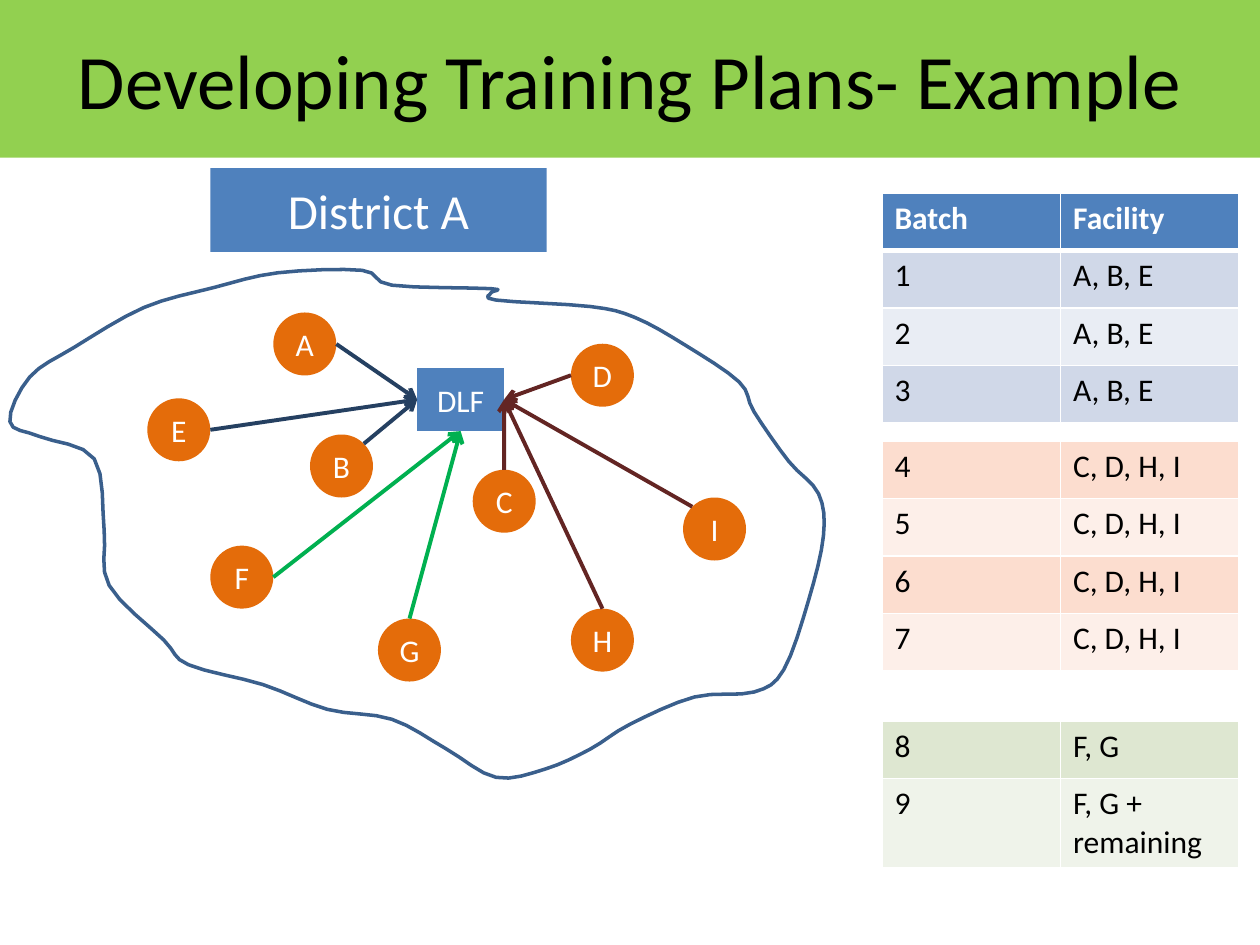
import math

import lxml.etree
import pptx
import pptx.dml.color
import pptx.enum.shapes
import pptx.enum.text
import pptx.oxml.ns
import pptx.util

Cm, Pt = pptx.util.Cm, pptx.util.Pt
SHAPE = pptx.enum.shapes.MSO_SHAPE
CENTER = pptx.enum.text.PP_ALIGN.CENTER
MIDDLE = pptx.enum.text.MSO_ANCHOR.MIDDLE

THEME = {
    "font": "Calibri", "title_size": 44, "label_size": 28, "body_size": 18,
    "black": "000000", "white": "FFFFFF", "banner": "92D050", "box": "4F81BD",
    "facility": "E46C0A", "border": "3A5F8C",
    "navy": "254061", "maroon": "632523", "green": "00B050",
    "blue_bands": ("D0D8E8", "E9EDF4"),
    "red_bands": ("FCDDCF", "FDEFE9"),
    "green_bands": ("DEE7D1", "EFF3EA"),
}

TITLE = "Developing Training Plans- Example"
DISTRICT = ("District A", (4.24, 3.39, 6.78, 1.69))
HUB = ("DLF", (8.41, 7.42, 1.75, 1.27))

# Sides of the hub, as connection sites
LEFT, BOTTOM, RIGHT = 1, 2, 3
# Directions in which an arrow leaves its facility, in degrees
EAST, NORTHEAST, NORTH, NORTHWEST, WEST = range(0, 181, 45)
# name, left, top (cm), direction, hub side, arrow colour
DIAMETER = 1.27
FACILITIES = [
    ("A", 5.51, 6.30, EAST, LEFT, "navy"),
    ("E", 2.97, 8.03, EAST, LEFT, "navy"),
    ("B", 6.25, 8.76, NORTHEAST, LEFT, "navy"),
    ("D", 11.51, 6.93, WEST, RIGHT, "maroon"),
    ("I", 13.77, 10.03, NORTHWEST, RIGHT, "maroon"),
    ("H", 11.51, 12.27, NORTH, RIGHT, "maroon"),
    ("C", 9.53, 9.47, NORTH, RIGHT, "maroon"),
    ("F", 4.24, 11.00, EAST, BOTTOM, "green"),
    ("G", 7.62, 12.47, NORTH, BOTTOM, "green"),
]

# top (cm), header, band colours, batches, facilities
TABLE_LEFT, COLUMN_WIDTH, ROW_HEIGHT = 17.78, 3.6, 1.16
BATCHES = [
    (3.89, ("Batch", "Facility"), "blue_bands", "123", ["A, B, E"] * 3),
    (8.89, None, "red_bands", "4567", ["C, D, H, I"] * 4),
    (14.53, None, "green_bands", "89", ["F, G", "F, G + remaining"]),
]

# District boundary (cm)
BOUNDARY = [
    (5.6, 5.5), (4.3, 5.8), (2.9, 6.2), (1.5, 7), (0.6, 7.6), (0.2, 8.5),
    (0.8, 8.8), (1.9, 9.25), (2.1, 10.7), (2.2, 11.8), (3.3, 12.9),
    (3.8, 13.4), (5.3, 13.8), (6.6, 14.3), (7.9, 14.5), (9, 15.1),
    (10, 15.67), (11, 15.5), (11.9, 15.1), (12.7, 14.6), (14, 14.05),
    (15.2, 13.95), (15.8, 13.5), (16.3, 12.1), (16.6, 10.8), (16.5, 9.95),
    (15.9, 9.3), (15.2, 8.3), (14.9, 7.7), (13.8, 6.95), (12.8, 6.4),
    (11.9, 6.18), (10, 6.05), (9.9, 5.9), (9.9, 5.82), (7.9, 5.75),
    (7.3, 5.45),
]


def color(name):
    return pptx.dml.color.RGBColor.from_string(THEME[name])


def write(frame, text, size="body_size", ink="white", bold=False, align=None):
    frame.word_wrap = True
    para = frame.paragraphs[0]
    para.alignment = align
    span = para.add_run()
    span.text = text
    span.font.name = THEME["font"]
    span.font.size = Pt(THEME[size])
    span.font.bold = bold
    span.font.color.rgb = color(ink)


def paint(item, rgb):
    item.fill.solid()
    item.fill.fore_color.rgb = rgb


def add_label(page, kind, place, text, fill, size="body_size"):
    box = page.shapes.add_shape(kind, *map(Cm, place))
    box.shadow.inherit = False
    paint(box, color(fill))
    box.line.fill.background()
    box.text_frame.vertical_anchor = MIDDLE
    write(box.text_frame, text, size=size, align=CENTER)
    return box


def smooth(points, steps=4):
    """Closed Catmull-Rom curve through the points."""
    curve = []
    for i in range(len(points)):
        corners = [points[(i + k) % len(points)] for k in (-1, 0, 1, 2)]
        for step in range(steps):
            t = step / steps
            curve.append(tuple(
                b + t / 2 * (c - a + t * (2 * a - 5 * b + 4 * c - d
                                          + t * (3 * (b - c) + d - a)))
                for a, b, c, d in zip(*corners)))
    return curve


def add_boundary(page):
    curve = [(Cm(x), Cm(y)) for x, y in smooth(BOUNDARY)]
    builder = page.shapes.build_freeform(*curve[0])
    builder.add_line_segments(curve[1:], close=True)
    outline = builder.convert_to_shape()
    outline.shadow.inherit = False
    outline.fill.background()
    outline.line.color.rgb = color("border")
    outline.line.width = Pt(2)


def add_arrow(page, start, hub, side, ink):
    x, y = map(Cm, start)
    arrow = page.shapes.add_connector(
        pptx.enum.shapes.MSO_CONNECTOR.STRAIGHT, x, y, x, y)
    arrow.end_connect(hub, side)
    arrow.line.color.rgb = color(ink)
    arrow.line.width = Pt(2.25)
    qn = pptx.oxml.ns.qn
    properties = arrow._element.spPr
    lxml.etree.SubElement(properties.find(qn("a:ln")), qn("a:tailEnd"), type="arrow")
    lxml.etree.SubElement(properties, qn("a:effectLst"))


def add_borders(cell, bottom):
    qn = pptx.oxml.ns.qn
    properties = cell._tc.get_or_add_tcPr()
    for index, edge in enumerate("LRTB"):
        width = Pt(bottom if edge == "B" else 1)
        line = lxml.etree.Element(qn("a:ln" + edge), w=str(width))
        fill = lxml.etree.SubElement(line, qn("a:solidFill"))
        lxml.etree.SubElement(fill, qn("a:srgbClr"), val=THEME["white"])
        properties.insert(index, line)


def add_batches(page, top, header, bands, batches, facilities):
    lines = ([header] if header else []) + list(zip(batches, facilities))
    table = page.shapes.add_table(
        len(lines), 2, Cm(TABLE_LEFT), Cm(top),
        Cm(2 * COLUMN_WIDTH), Cm(ROW_HEIGHT * len(lines))).table
    table.first_row = header is not None
    table.horz_banding = False
    for r, line in enumerate(lines):
        is_header = line is header
        band = THEME[bands][(r - table.first_row) % 2]
        fill = color("box") if is_header else pptx.dml.color.RGBColor.from_string(band)
        for c, text in enumerate(line):
            cell = table.cell(r, c)
            paint(cell, fill)
            add_borders(cell, bottom=3 if is_header else 1)
            write(cell.text_frame, text, bold=is_header,
                  ink="white" if is_header else "black")


def main():
    deck = pptx.Presentation()
    deck.slide_width, deck.slide_height = Cm(25.4), Cm(19.05)
    page = deck.slides.add_slide(deck.slide_layouts[5])

    title = page.shapes.title
    title.left, title.top, title.width, title.height = map(Cm, (0, 0, 25.4, 3.18))
    paint(title, color("banner"))
    title.text_frame.vertical_anchor = MIDDLE
    write(title.text_frame, TITLE, size="title_size", ink="black", align=CENTER)

    add_boundary(page)
    name, place = DISTRICT
    add_label(page, SHAPE.RECTANGLE, place, name, "box", size="label_size")
    name, place = HUB
    hub = add_label(page, SHAPE.RECTANGLE, place, name, "box")

    for name, left, top, *_ in FACILITIES:
        add_label(page, SHAPE.OVAL, (left, top, DIAMETER, DIAMETER), name, "facility")
    radius = DIAMETER / 2
    for _, left, top, direction, side, ink in FACILITIES:
        turn = math.radians(direction)
        start = (left + radius * (1 + math.cos(turn)),
                 top + radius * (1 - math.sin(turn)))
        add_arrow(page, start, hub, side, ink)

    for batch in BATCHES:
        add_batches(page, *batch)
    deck.save("out.pptx")


if __name__ == "__main__":
    main()
